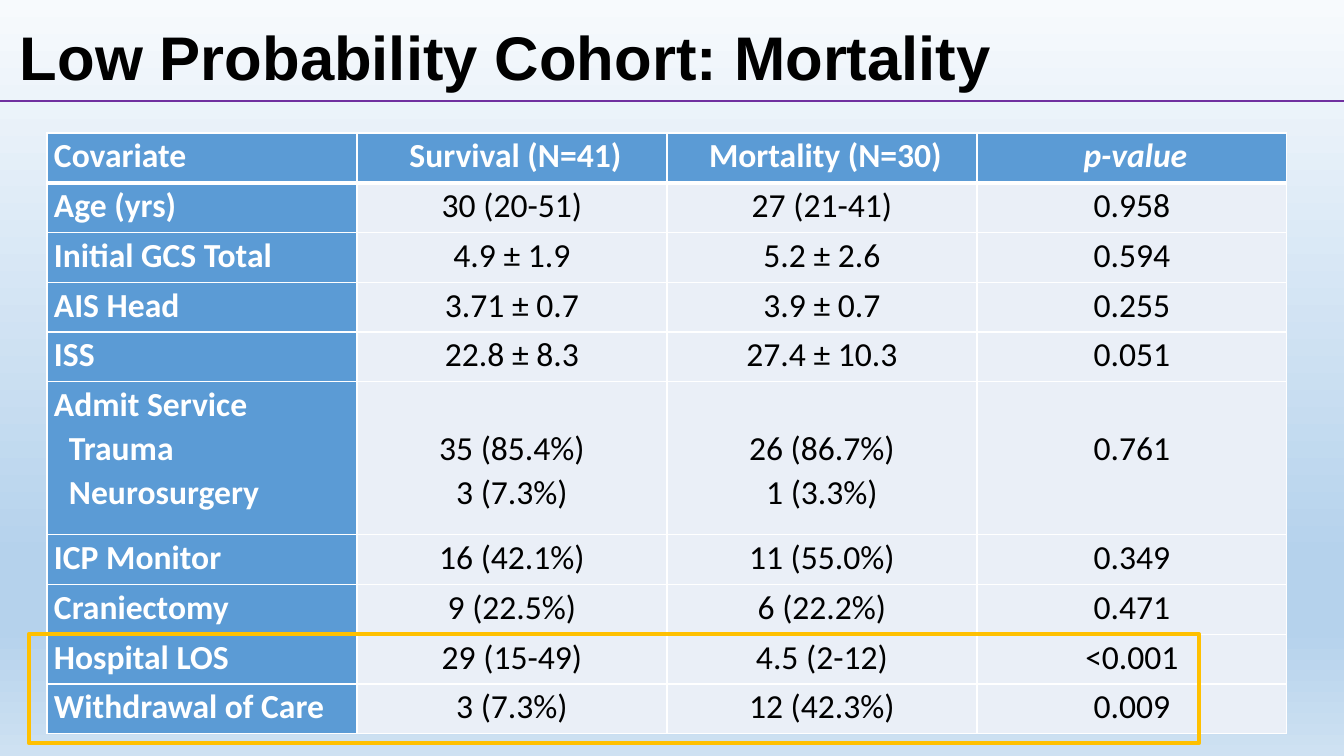
import lxml.etree
import pptx
import pptx.dml.color
import pptx.enum.shapes
import pptx.enum.text
import pptx.oxml.ns
import pptx.util
from dataclasses import dataclass


@dataclass(frozen=True)
class Theme:
    title_font: str = "Arial"
    table_font: str = "Calibri"
    title_size: int = 44
    table_size: int = 24
    black: str = "000000"
    white: str = "FFFFFF"
    label_fill: str = "5B9BD5"
    value_fill: str = "EAEFF7"
    rule: str = "7030A0"
    highlight: str = "FFC000"
    background: tuple = ((0, "F7FAFD"), (74, "B5D2EC"), (83, "B5D2EC"), (100, "CEE1F2"))


theme = Theme()
qn = pptx.oxml.ns.qn
rgb = pptx.dml.color.RGBColor.from_string
align = pptx.enum.text.PP_ALIGN


def px(length):
    return pptx.util.Emu(round(length * 914400 / 100.8))


def add_run(paragraph, text, font, size, color, bold, italic=False):
    run = paragraph.add_run()
    run.text = text
    run.font.name = font
    run.font.size = pptx.util.Pt(size)
    run.font.color.rgb = rgb(color)
    run.font.bold = bold
    run.font.italic = italic


presentation = pptx.Presentation()
presentation.slide_width = px(1344)
presentation.slide_height = px(756)
slide = presentation.slides.add_slide(presentation.slide_layouts[6])

background = slide.background.fill
background.gradient()
background.gradient_angle = 270
stops = slide.element.find(".//" + qn("a:gsLst"))
for stop in list(stops):
    stops.remove(stop)
for position, color in theme.background:
    stop = lxml.etree.SubElement(stops, qn("a:gs"), pos=str(position * 1000))
    lxml.etree.SubElement(stop, qn("a:srgbClr"), val=color)

title = slide.shapes.add_textbox(px(10), px(14), px(1159), px(93)).text_frame
title.word_wrap = True
title.vertical_anchor = pptx.enum.text.MSO_ANCHOR.MIDDLE
title.paragraphs[0].line_spacing = 0.9
add_run(title.paragraphs[0], "Low Probability Cohort: Mortality",
        theme.title_font, theme.title_size, theme.black, True)

rule = slide.shapes.add_connector(
    pptx.enum.shapes.MSO_CONNECTOR.STRAIGHT, 0, px(101), px(1344), px(101))
rule.line.color.rgb = rgb(theme.rule)
rule.line.width = pptx.util.Pt(1)
lxml.etree.SubElement(rule._element.spPr, qn("a:effectLst"))

covariates = [
    ("Covariate", "Survival (N=41)", "Mortality (N=30)", "p-value"),
    ("Age (yrs)", "30 (20-51)", "27 (21-41)", "0.958"),
    ("Initial GCS Total", "4.9 ± 1.9", "5.2 ± 2.6", "0.594"),
    ("AIS Head", "3.71 ± 0.7", "3.9 ± 0.7", "0.255"),
    ("ISS", "22.8 ± 8.3", "27.4 ± 10.3", "0.051"),
    ("Admit Service\nTrauma\nNeurosurgery", "35 (85.4%)\n3 (7.3%)", "26 (86.7%)\n1 (3.3%)", "0.761"),
    ("ICP Monitor", "16 (42.1%)", "11 (55.0%)", "0.349"),
    ("Craniectomy", "9 (22.5%)", "6 (22.2%)", "0.471"),
    ("Hospital LOS", "29 (15-49)", "4.5 (2-12)", "<0.001"),
    ("Withdrawal of Care", "3 (7.3%)", "12 (42.3%)", "0.009"),
]
admit_row = 5
admit_height = 153
table_height = 601
line_height = 44
row_height = (table_height - admit_height) / (len(covariates) - 1)

table = slide.shapes.add_table(
    len(covariates), 4, px(47), px(133), px(1241), px(table_height)).table
table.first_col = True
table.horz_banding = False
for column in table.columns:
    column.width = px(310)

for row, values in enumerate(covariates):
    table.rows[row].height = px(admit_height if row == admit_row else row_height)
    for column, value in enumerate(values):
        cell = table.cell(row, column)
        is_label = row == 0 or column == 0
        cell.margin_left = px(14 if row == 0 and column else 7)
        cell.margin_right = px(7)
        cell.margin_top = px(line_height if row == admit_row and column else 0)
        cell.margin_bottom = 0
        cell.fill.solid()
        cell.fill.fore_color.rgb = rgb(theme.label_fill if is_label else theme.value_fill)

        for index, line in enumerate(value.split("\n")):
            frame = cell.text_frame
            paragraph = frame.add_paragraph() if index else frame.paragraphs[0]
            paragraph.line_spacing = 1.07
            paragraph.alignment = align.CENTER if column else align.LEFT
            if index and column == 0:
                paragraph._p.get_or_add_pPr().set("marL", str(px(15)))
            add_run(paragraph, line, theme.table_font, theme.table_size,
                    theme.white if is_label else theme.black, is_label, line == "p-value")

        properties = cell._tc.get_or_add_tcPr()
        for index, side in enumerate(("lnL", "lnR", "lnT", "lnB")):
            under_header = (row, side) in ((0, "lnB"), (1, "lnT"))
            border = lxml.etree.Element(qn("a:" + side), w=str(pptx.util.Pt(3 if under_header else 1)))
            fill = lxml.etree.SubElement(border, qn("a:solidFill"))
            lxml.etree.SubElement(fill, qn("a:srgbClr"), val=theme.white)
            properties.insert(index, border)

highlight = slide.shapes.add_shape(
    pptx.enum.shapes.MSO_SHAPE.FLOWCHART_PROCESS, px(29), px(634), px(1170), px(109))
highlight.shadow.inherit = False
highlight.fill.background()
highlight.line.color.rgb = rgb(theme.highlight)
highlight.line.width = pptx.util.Pt(3)

presentation.save("out.pptx")
